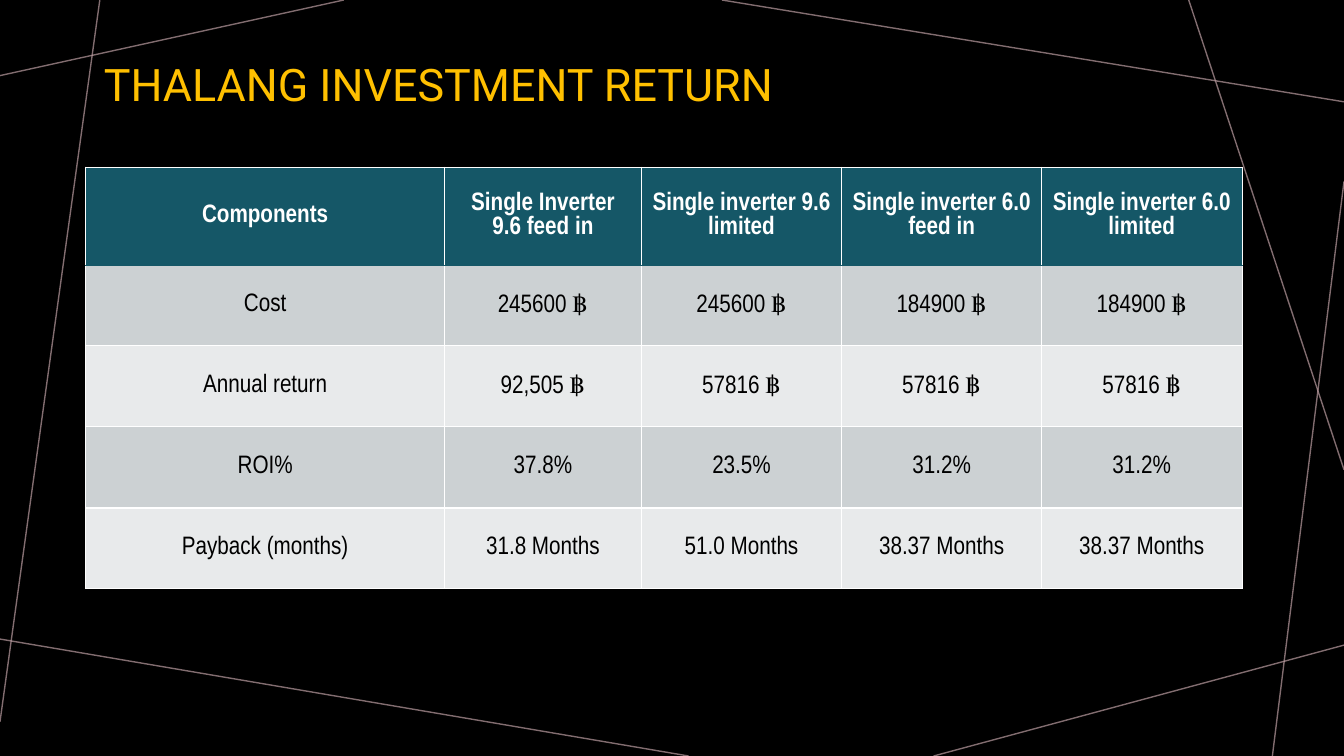
from lxml import etree
from pptx import Presentation
from pptx.dml.color import RGBColor
from pptx.enum.shapes import MSO_CONNECTOR
from pptx.enum.text import MSO_ANCHOR, MSO_AUTO_SIZE, PP_ALIGN
from pptx.oxml.ns import qn
from pptx.util import Inches, Pt

STRAIGHT = MSO_CONNECTOR.STRAIGHT
MIDDLE = MSO_ANCHOR.MIDDLE
NO_FIT = MSO_AUTO_SIZE.NONE
LEFT, CENTER = PP_ALIGN.LEFT, PP_ALIGN.CENTER

BLACK, WHITE, TEAL = "000000", "FFFFFF", "155767"
BANDS = ("CCD1D3", "E8EAEB")
TITLE_FONT = {"name": "Roboto", "size": Pt(32), "bold": False}
HEADER_FONT = {"name": "Arial Narrow", "size": Pt(18), "bold": True}
BODY_FONT = {**HEADER_FONT, "bold": False}

BACKGROUND_LINES = [
    ((3.41, 0), (0, 0.75)),
    ((0.99, 0), (0, 7.16)),
    ((6.83, 7.5), (0, 6.34)),
    ((13.33, 6.4), (9.26, 7.5)),
    ((13.33, 1.8), (12.62, 7.5)),
    ((13.33, 4.66), (11.79, 0)),
    ((13.33, 1.01), (7.16, 0)),
]
COLUMN_WIDTHS = [3.56, 1.95, 1.99, 1.98, 1.99]
ROW_HEIGHTS = [0.97, 0.8, 0.8, 0.81, 0.8]
RETURNS = [
    ["Components", "Single Inverter 9.6 feed in", "Single inverter 9.6 limited",
     "Single inverter 6.0 feed in", "Single inverter 6.0 limited"],
    ["Cost", "245600 ฿", "245600 ฿", "184900 ฿", "184900 ฿"],
    ["Annual return", "92,505 ฿", "57816 ฿", "57816 ฿", "57816 ฿"],
    ["ROI%", "37.8%", "23.5%", "31.2%", "31.2%"],
    ["Payback (months)", "31.8 Months", "51.0 Months", "38.37 Months", "38.37 Months"],
]


def color(value):
    """Return the colour for a hex string."""
    return RGBColor.from_string(value)


def write_text(text_frame, text, font, font_color, alignment):
    """Write one formatted paragraph."""
    paragraph = text_frame.paragraphs[0]
    paragraph.alignment = alignment
    run = paragraph.add_run()
    run.text = text
    for name, value in font.items():
        setattr(run.font, name, value)
    run.font.color.rgb = color(font_color)
    return paragraph


def add_background(slide):
    """Paint the black background and its crossing lines."""
    slide.background.fill.solid()
    slide.background.fill.fore_color.rgb = color(BLACK)
    for start, end in BACKGROUND_LINES:
        line = slide.shapes.add_connector(STRAIGHT, *map(Inches, start + end))
        line.line.color.rgb = color("BA9CA0")
        line.line.width = Pt(1)
        properties = line._element.spPr
        tint = properties.find(".//" + qn("a:srgbClr"))
        etree.SubElement(tint, qn("a:alpha"), val="70000")
        etree.SubElement(properties, qn("a:effectLst"))


def add_title(slide, text, left, top, width, height):
    """Place and format the title placeholder."""
    title = slide.shapes.title
    title.left, title.top = Inches(left), Inches(top)
    title.width, title.height = Inches(width), Inches(height)
    title.text_frame.auto_size = NO_FIT
    title.text_frame.vertical_anchor = MIDDLE
    paragraph = write_text(title.text_frame, text, TITLE_FONT, "FFC000", LEFT)
    paragraph.line_spacing = 0.9


def set_borders(cell, top, bottom):
    """Give a cell white sides and the given top and bottom (colour, points)."""
    side = (WHITE, 1)
    borders = {"a:lnL": side, "a:lnR": side, "a:lnT": top, "a:lnB": bottom}
    properties = cell._tc.get_or_add_tcPr()
    for position, (tag, (border_color, points)) in enumerate(borders.items()):
        border = etree.Element(qn(tag), w=str(Pt(points)))
        fill = etree.SubElement(border, qn("a:solidFill"))
        etree.SubElement(fill, qn("a:srgbClr"), val=border_color)
        properties.insert(position, border)


def add_returns_table(slide, left, top):
    """Build the table of investment returns."""
    frame = slide.shapes.add_table(
        len(ROW_HEIGHTS), len(COLUMN_WIDTHS), Inches(left), Inches(top),
        Inches(sum(COLUMN_WIDTHS)), Inches(sum(ROW_HEIGHTS)))
    table = frame.table
    for column, width in zip(table.columns, COLUMN_WIDTHS):
        column.width = Inches(width)
    for index, (row, height, texts) in enumerate(zip(table.rows, ROW_HEIGHTS, RETURNS)):
        row.height = Inches(height)
        is_header = index == 0
        font, font_color = (HEADER_FONT, WHITE) if is_header else (BODY_FONT, BLACK)
        top_border = (TEAL, 0.75) if index == 1 else (WHITE, 1)
        bottom_border = (TEAL, 0.75) if is_header else (WHITE, 1)
        for cell, text in zip(row.cells, texts):
            cell.fill.solid()
            cell.fill.fore_color.rgb = color(TEAL if is_header else BANDS[(index - 1) % 2])
            cell.vertical_anchor = MIDDLE
            write_text(cell.text_frame, text, font, font_color, CENTER)
            set_borders(cell, top_border, bottom_border)


def main():
    """Build and save the presentation."""
    presentation = Presentation()
    presentation.slide_width, presentation.slide_height = Inches(13.33), Inches(7.5)
    slide = presentation.slides.add_slide(presentation.slide_layouts[5])
    add_background(slide)
    add_title(slide, "THALANG INVESTMENT RETURN", 0.93, 0.11, 11.96, 1.51)
    add_returns_table(slide, 0.85, 1.66)
    presentation.save("out.pptx")


if __name__ == "__main__":
    main()
